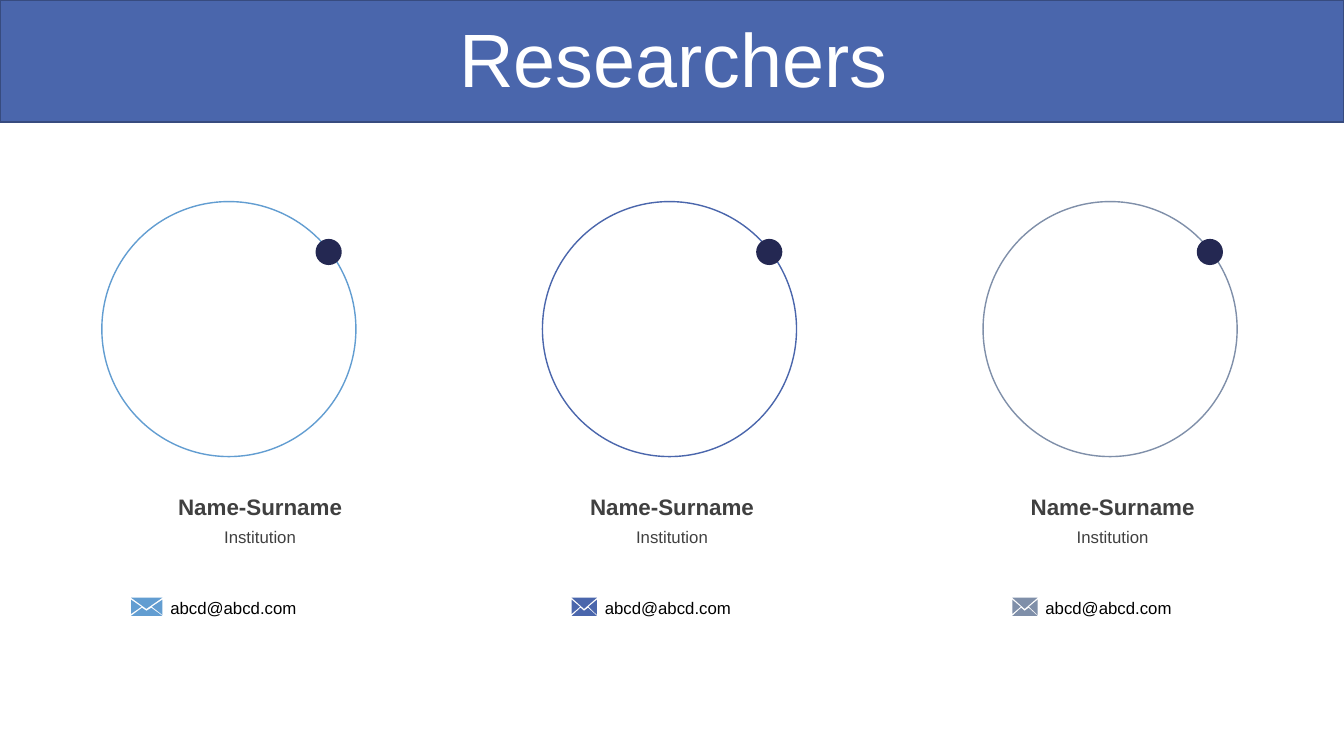
from dataclasses import dataclass
from pptx import Presentation
from pptx import util as u
from pptx.dml.color import RGBColor
from pptx.enum import shapes, text


@dataclass(frozen=True)
class Theme:
    font: str = "Arial"
    band: str = "4A66AC"
    edge: str = "374B7F"
    dot: str = "242852"
    white: str = "FFFFFF"
    grey: str = "404040"
    black: str = "000000"
    title: int = 54
    name: int = 16
    small: int = 12


@dataclass(frozen=True)
class Box:
    left: float
    top: float
    width: float
    height: float

    def size(self) -> list[int]:
        return [u.Inches(n) for n in (self.left, self.top, self.width, self.height)]


@dataclass(frozen=True)
class Label:
    words: str
    box: Box
    size: int
    color: str
    align: text.PP_ALIGN = text.PP_ALIGN.CENTER
    bold: bool = False
    anchor: text.MSO_ANCHOR = text.MSO_ANCHOR.TOP
    space: float = 1.0


@dataclass(frozen=True)
class Person:
    color: str
    width: float
    icon: float
    mail: float


THEME = Theme()
START, PITCH = 1.01, 4.37
PEOPLE = [
    Person("629DD1", 2.76, 0.31, 2.21),
    Person("4A66AC", 2.19, 0.25, 1.77),
    Person("7F8FA9", 2.19, 0.25, 1.77),
]
FLAPS = [
    [(0.65, 0.1), (1, 0.18), (0, 0.18), (0.35, 0.1), (0.49, 0.13)],
    [(1, 0.02), (1, 0.17), (0.67, 0.09), (0.71, 0.08)],
    [(0, 0.02), (0.33, 0.09), (0, 0.16)],
    [(0, 0), (1, 0), (0.49, 0.11)],
]


def paint(shape, fill: str | None = None, line: str | None = None) -> None:
    shape.shadow.inherit = False
    if fill:
        shape.fill.solid()
        shape.fill.fore_color.rgb = RGBColor.from_string(fill)
    else:
        shape.fill.background()
    if line:
        shape.line.color.rgb = RGBColor.from_string(line)
        shape.line.width = u.Pt(1)
    else:
        shape.line.fill.background()


def draw(slide, kind: shapes.MSO_SHAPE, box: Box,
         fill: str | None = None, line: str | None = None) -> None:
    paint(slide.shapes.add_shape(kind, *box.size()), fill, line)


def write(slide, label: Label) -> None:
    frame = slide.shapes.add_textbox(*label.box.size()).text_frame
    frame.word_wrap = True
    frame.vertical_anchor = label.anchor
    para = frame.paragraphs[0]
    para.alignment = label.align
    para.line_spacing = label.space
    run = para.add_run()
    run.text = label.words
    style = {"name": THEME.font, "size": u.Pt(label.size), "bold": label.bold}
    for key, value in style.items():
        setattr(run.font, key, value)
    run.font.color.rgb = RGBColor.from_string(label.color)


def fold(slide, left: float, top: float, width: float, color: str) -> None:
    flaps = [[(u.Inches(left + x * width), u.Inches(top + y)) for x, y in flap]
             for flap in FLAPS]
    form = slide.shapes.build_freeform(*flaps[0][0])
    form.add_line_segments(flaps[0][1:], close=True)
    for flap in flaps[1:]:
        form.move_to(*flap[0])
        form.add_line_segments(flap[1:], close=True)
    paint(form.convert_to_shape(), color)


def show(slide, left: float, person: Person) -> None:
    oval = shapes.MSO_SHAPE.OVAL
    draw(slide, oval, Box(left, 2, 2.52, 2.53), line=person.color)
    draw(slide, oval, Box(left + 2.12, 2.37, 0.26, 0.26), THEME.dot)
    edge, icon = left + 0.19, left + 0.29
    fold(slide, icon, 5.93, person.icon, person.color)
    labels = [
        Label("Name-Surname", Box(edge, 4.84, person.width, 0.37),
              THEME.name, THEME.grey, bold=True),
        Label("Institution", Box(edge, 5.18, person.width, 0.3),
              THEME.small, THEME.grey),
        Label("abcd@abcd.com", Box(icon + person.icon - 0.02, 5.88, person.mail, 0.3),
              THEME.small, THEME.black, text.PP_ALIGN.LEFT),
    ]
    for label in labels:
        write(slide, label)


def main() -> None:
    deck = Presentation()
    deck.slide_width, deck.slide_height = u.Inches(13.33), u.Inches(7.5)
    slide = deck.slides.add_slide(deck.slide_layouts[6])
    draw(slide, shapes.MSO_SHAPE.RECTANGLE, Box(0, 0, 13.33, 1.21), THEME.band, THEME.edge)
    write(slide, Label("Researchers", Box(0.35, 0.23, 12.66, 0.79), THEME.title,
                       THEME.white, anchor=text.MSO_ANCHOR.MIDDLE, space=0.9))
    for i, person in enumerate(PEOPLE):
        show(slide, START + i * PITCH, person)
    deck.save("out.pptx")


if __name__ == "__main__":
    main()
